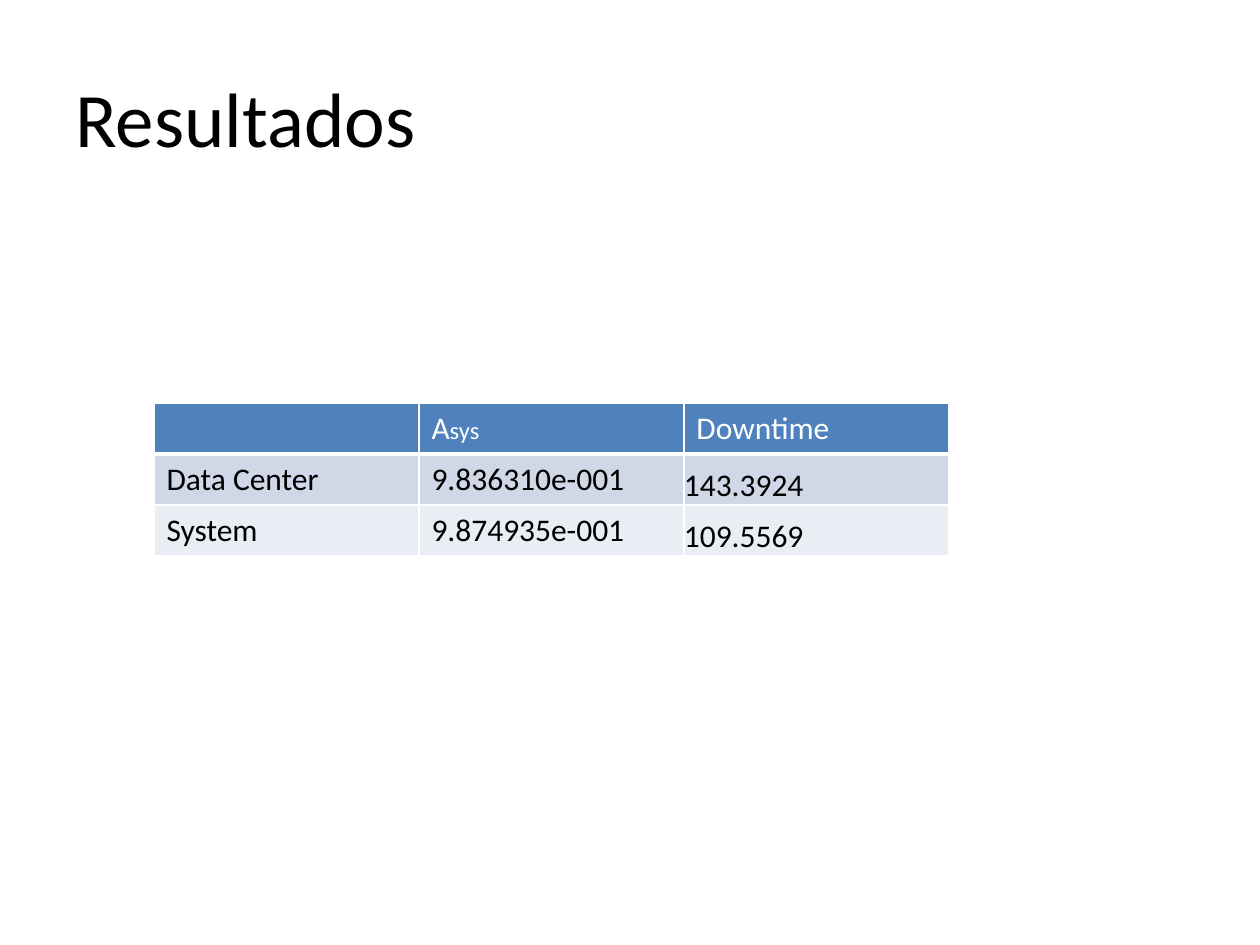
import lxml.etree
import pptx
import pptx.dml.color
import pptx.enum.text
import pptx.oxml.ns
import pptx.util

PX = 914400 // 126
FONT = "Calibri"
COLORS = {
    "text": "000000",
    "header_text": "FFFFFF",
    "border": "FFFFFF",
    "header": "4F81BD",
    "odd": "D0D8E8",
    "even": "E9EDF4",
}
ROWS = [
    [[], [("A", 18), ("sys", 14)], [("Downtime", 18)]],
    [[("Data Center", 18)], [("9.836310e-001", 18)], [("143.3924", 18)]],
    [[("System", 18)], [("9.874935e-001", 18)], [("109.5569", 18)]],
]


def rgb(name):
    return pptx.dml.color.RGBColor.from_string(COLORS[name])


def set_borders(cell, bottom):
    """Draw 1 pt cell borders, with the bottom one of the given width in points."""
    tcPr = cell._tc.get_or_add_tcPr()
    qn = pptx.oxml.ns.qn
    for side, width in (("L", 1), ("R", 1), ("T", 1), ("B", bottom)):
        ln = lxml.etree.SubElement(tcPr, qn(f"a:ln{side}"), w=str(pptx.util.Pt(width)))
        fill = lxml.etree.SubElement(ln, qn("a:solidFill"))
        lxml.etree.SubElement(fill, qn("a:srgbClr"), val=COLORS["border"])


def add_title(s, x, y, w, h):
    tf = s.shapes.add_textbox(x * PX, y * PX, w * PX, h * PX).text_frame
    tf.word_wrap = True
    tf.vertical_anchor = pptx.enum.text.MSO_ANCHOR.MIDDLE
    p = tf.paragraphs[0]
    p.text = "Resultados"
    p.font.name = FONT
    p.font.size = pptx.util.Pt(44)
    p.font.color.rgb = rgb("text")


def fill_cell(cell, runs, fill, color, bottom):
    set_borders(cell, bottom)
    cell.fill.solid()
    cell.fill.fore_color.rgb = rgb(fill)
    p = cell.text_frame.paragraphs[0]
    p.font.name = FONT
    p.font.bold = False
    p.font.color.rgb = rgb(color)
    for text, size in runs:
        r = p.add_run()
        r.text = text
        r.font.size = pptx.util.Pt(size)


def align_downtime(cell):
    cell.vertical_anchor = pptx.enum.text.MSO_ANCHOR.BOTTOM
    cell.margin_left = cell.margin_right = 0
    cell.margin_top = cell.margin_bottom = 0


def add_results_table(s, x, y, w, h):
    frame = s.shapes.add_table(len(ROWS), len(ROWS[0]), x * PX, y * PX, w * PX, h * PX)
    table = frame.table
    for i, row in enumerate(ROWS):
        header = i == 0
        fill = "header" if header else "odd" if i % 2 else "even"
        color = "header_text" if header else "text"
        for j, runs in enumerate(row):
            fill_cell(table.cell(i, j), runs, fill, color, 3 if header else 1)
        if not header:
            align_downtime(table.cell(i, len(row) - 1))


def main():
    prs = pptx.Presentation()
    prs.slide_width = 1260 * PX
    prs.slide_height = 945 * PX
    s = prs.slides.add_slide(prs.slide_layouts[6])
    add_title(s, 63, 38, 1134, 157)
    add_results_table(s, 154, 403, 795, 153)
    prs.save("out.pptx")


if __name__ == "__main__":
    main()
